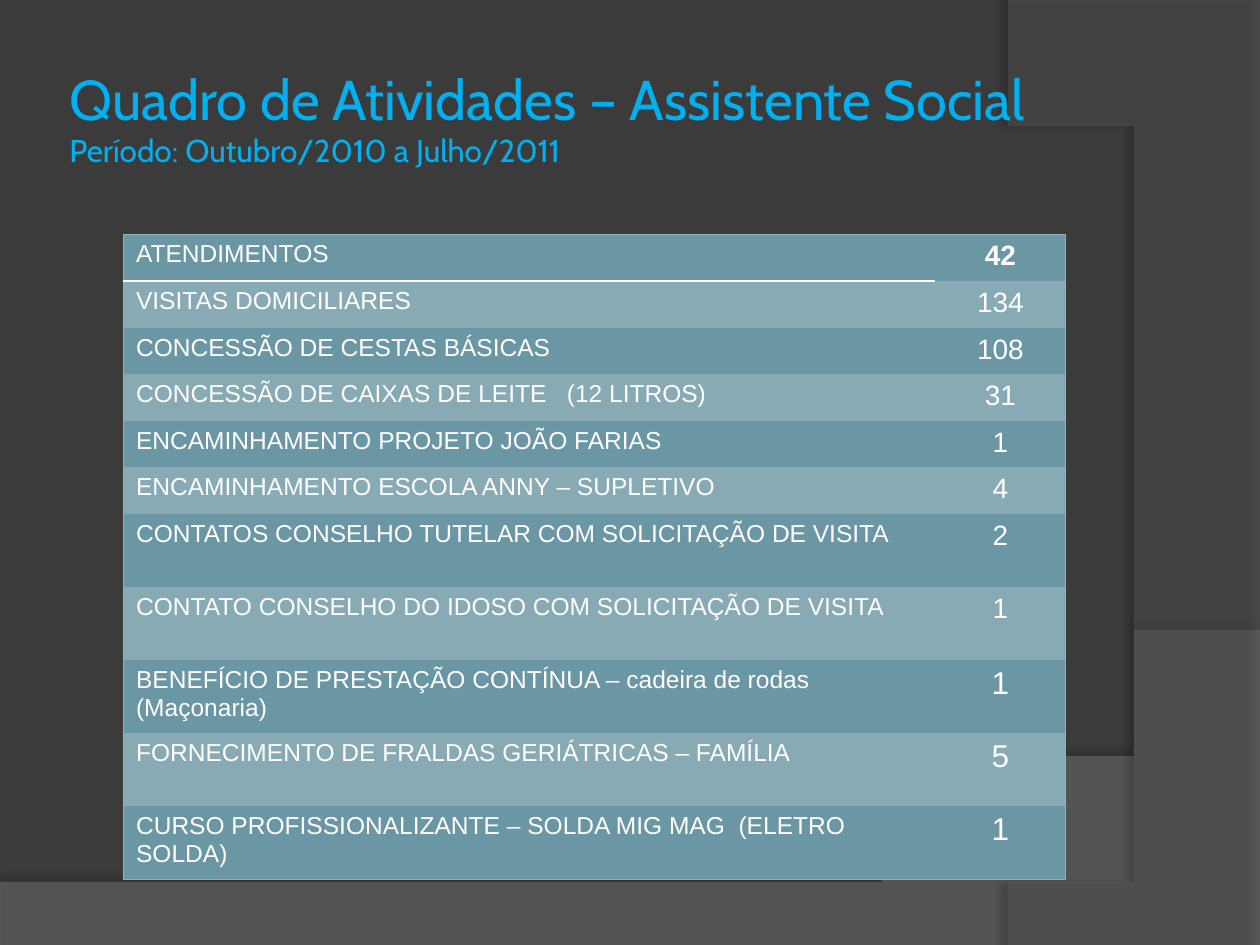
from lxml import etree
from pptx import Presentation
from pptx.dml.color import RGBColor
from pptx.enum.text import MSO_ANCHOR, PP_ALIGN
from pptx.oxml.ns import qn
from pptx.util import Inches, Pt

MIDDLE = MSO_ANCHOR.MIDDLE
LEFT, CENTER = PP_ALIGN.LEFT, PP_ALIGN.CENTER

BACKGROUND, WAVE, ARC = "3B3B3B", "7F7F7F", "5E5E5E"
TITLE, TEXT, BORDER = "00B0F0", "FFFFFF", "90B2C0"
BANDS = ("6B96A4", "88AAB5")

# Label, count, count size in points, row height in inches
ACTIVITIES = [
    ("ATENDIMENTOS", "42", 16, 0.37),
    ("VISITAS DOMICILIARES", "134", 16, 0.37),
    ("CONCESSÃO DE CESTAS BÁSICAS", "108", 16, 0.37),
    ("CONCESSÃO DE CAIXAS DE LEITE   (12 LITROS)", "31", 16, 0.37),
    ("ENCAMINHAMENTO PROJETO JOÃO FARIAS", "1", 16, 0.37),
    ("ENCAMINHAMENTO ESCOLA ANNY – SUPLETIVO", "4", 16, 0.37),
    ("CONTATOS CONSELHO TUTELAR COM SOLICITAÇÃO DE VISITA", "2", 16, 0.58),
    ("CONTATO CONSELHO DO IDOSO COM SOLICITAÇÃO DE VISITA", "1", 16, 0.58),
    ("BENEFÍCIO DE PRESTAÇÃO CONTÍNUA – cadeira de rodas (Maçonaria)", "1", 18, 0.58),
    ("FORNECIMENTO DE FRALDAS GERIÁTRICAS – FAMÍLIA", "5", 18, 0.58),
    ("CURSO PROFISSIONALIZANTE – SOLDA MIG MAG  (ELETRO SOLDA)", "1", 18, 0.58),
]


def rgb(color):
    return RGBColor.from_string(color)


def add_color(parent, color, alpha=100):
    node = etree.SubElement(parent, qn("a:srgbClr"), val=color)
    etree.SubElement(node, qn("a:alpha"), val=str(alpha * 1000))


def add_span(para, text, size, font, color, bold=False):
    span = para.add_run()
    span.text = text
    span.font.size = Pt(size)
    span.font.name = font
    span.font.bold = bold
    span.font.color.rgb = rgb(color)


def bezier(start, control_1, control_2, end, steps=48):
    """Return points along a cubic curve, without its start."""
    points = []
    for step in range(1, steps + 1):
        t = step / steps
        weights = ((1 - t) ** 3, 3 * t * (1 - t) ** 2, 3 * t * t * (1 - t), t ** 3)
        points.append(tuple(
            sum(w * v for w, v in zip(weights, axis))
            for axis in zip(start, control_1, control_2, end)))
    return points


def add_swoosh(page, points, color, alpha, shadow_alpha, distance, direction):
    """Draw a translucent outline with a soft shadow; points are in inches."""
    builder = page.shapes.build_freeform(*points[0], scale=Inches(1))
    builder.add_line_segments(points[1:], close=True)
    shape = builder.convert_to_shape()
    shape.line.fill.background()
    shape.fill.solid()
    shape.fill.fore_color.rgb = rgb(color)
    properties = shape._element.spPr
    fill_color = properties.find(qn("a:solidFill")).find(qn("a:srgbClr"))
    etree.SubElement(fill_color, qn("a:alpha"), val=str(alpha * 1000))
    effects = etree.SubElement(properties, qn("a:effectLst"))
    shadow = etree.SubElement(
        effects, qn("a:outerShdw"), blurRad=str(Pt(4)), dist=str(Pt(distance)),
        dir=str(direction * 60000), algn="ctr", rotWithShape="0")
    add_color(shadow, "000000", shadow_alpha)


def add_backdrop(page):
    page.background.fill.solid()
    page.background.fill.fore_color.rgb = rgb(BACKGROUND)
    wave = [(0, 7.05), (0, 7.5), (10, 7.5), (10, 5.2)]
    wave += bezier((10, 5.2), (5.59, 7.29), (3.91, 7.19), (0, 7.05))
    add_swoosh(page, wave, WAVE, 45, 35, 3.5, 270)
    arc = [(10, 0.02), (10, 7.5), (8.21, 7.5)]
    arc += bezier((8.21, 7.5), (9.35, 6.19), (10.18, 3), (8, 0))
    add_swoosh(page, arc, ARC, 40, 45, 4, 180)


def add_title(page, left, top, width, height):
    box = page.shapes.add_textbox(left, top, width, height)
    frame = box.text_frame
    frame.word_wrap = True
    frame.vertical_anchor = MIDDLE
    frame.margin_left = frame.margin_right = Inches(0.05)
    frame.margin_top = frame.margin_bottom = Inches(0.05)
    para = frame.paragraphs[0]
    add_span(para, "Quadro de Atividades – Assistente Social", 32, "Cabin", TITLE)
    para.add_line_break()
    add_span(para, "Período: Outubro/2010 a Julho/2011", 18, "Cabin", TITLE)


def set_borders(cell, borders):
    """Set every side; borders maps a side (L, R, T, B) to colour and points."""
    properties = cell._tc.get_or_add_tcPr()
    for side in "LRTB":
        color, width = borders.get(side, (None, 0))
        line = etree.SubElement(properties, qn(f"a:ln{side}"), w=str(Pt(width)))
        if color:
            add_color(etree.SubElement(line, qn("a:solidFill")), color)
        else:
            etree.SubElement(line, qn("a:noFill"))


def fill_cell(cell, text, size, align, bold, band, borders):
    set_borders(cell, borders)
    cell.fill.solid()
    cell.fill.fore_color.rgb = rgb(band)
    para = cell.text_frame.paragraphs[0]
    para.alignment = align
    add_span(para, text, size, "Arial", TEXT, bold)


def add_activities(page, left, top, width, height):
    last = len(ACTIVITIES) - 1
    table = page.shapes.add_table(last + 1, 2, left, top, width, height).table
    count_width = Inches(1.04)
    table.columns[0].width = width - count_width
    table.columns[1].width = count_width
    edge, rule = (BORDER, 0.75), (TEXT, 1.5)
    for index, (label, count, count_size, row_height) in enumerate(ACTIVITIES):
        table.rows[index].height = Inches(row_height)
        outer = {}
        if index == 0:
            outer["T"] = edge
        if index == last:
            outer["B"] = edge
        label_borders = {**outer, "L": edge}
        if index == 0:
            label_borders["B"] = rule
        if index == 1:
            label_borders["T"] = rule
        band = BANDS[index % 2]
        fill_cell(table.cell(index, 0), label, 14, LEFT, False, band, label_borders)
        fill_cell(table.cell(index, 1), count, count_size, CENTER, index == 0,
                  band, {**outer, "R": edge})


def main():
    deck = Presentation()
    deck.slide_width, deck.slide_height = Inches(10), Inches(7.5)
    page = deck.slides.add_slide(deck.slide_layouts[6])
    add_backdrop(page)
    add_title(page, Inches(0.5), Inches(0.3), Inches(8.17), Inches(1.25))
    add_activities(page, Inches(0.98), Inches(1.86), Inches(7.48), Inches(5.11))
    deck.save("out.pptx")


if __name__ == "__main__":
    main()
